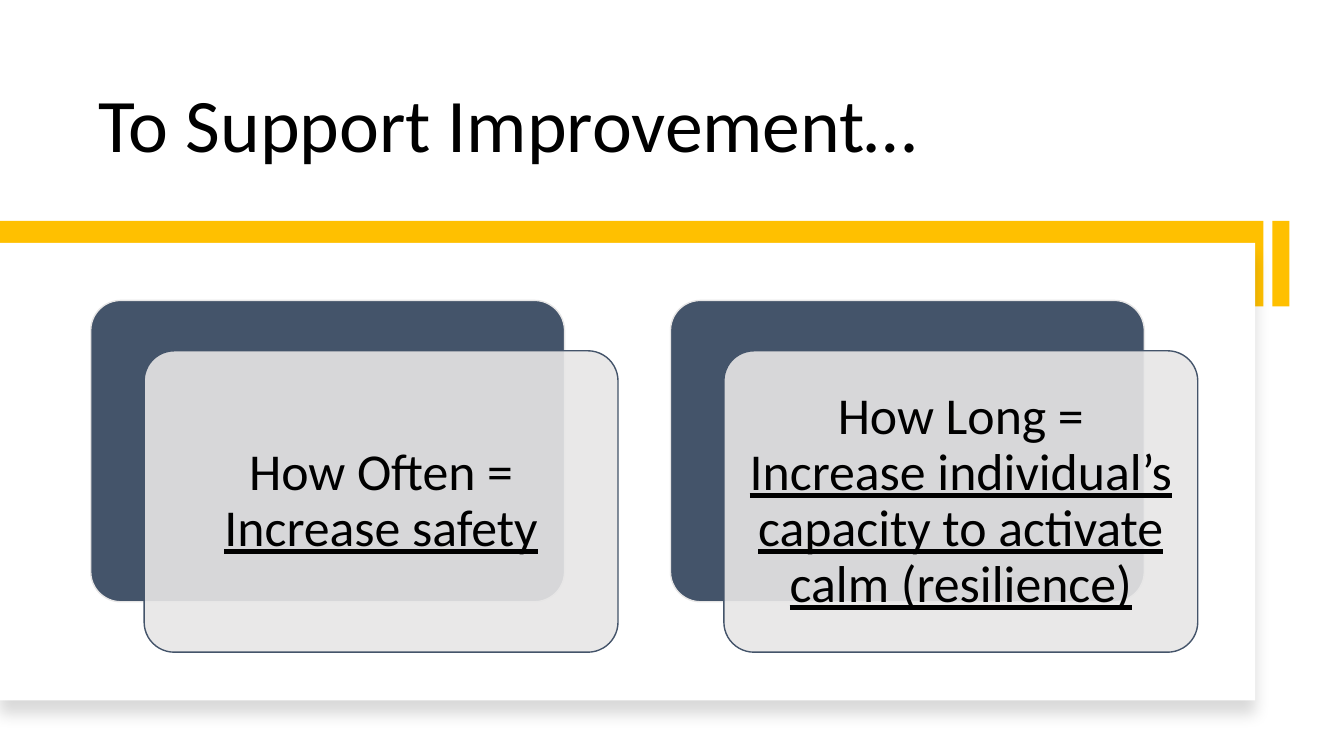
import pptx
import pptx.util
import pptx.dml.color
import pptx.enum.shapes
import pptx.enum.text
import lxml.etree
from dataclasses import dataclass
from pptx.oxml.ns import qn

SLIDE_WIDTH, SLIDE_HEIGHT = 13.33, 7.5
RECTANGLE = pptx.enum.shapes.MSO_SHAPE.RECTANGLE
ROUNDED = pptx.enum.shapes.MSO_SHAPE.ROUNDED_RECTANGLE
ANCHOR = pptx.enum.text.MSO_ANCHOR
ALIGN = pptx.enum.text.PP_ALIGN

# Card grid, in inches
FIRST_LEFT, CARD_TOP = 0.9, 2.98
CARD_WIDTH, CARD_HEIGHT = 4.7, 2.99
COLUMN_STEP = 5.75
FRONT_SHIFT_X, FRONT_SHIFT_Y = 0.53, 0.5

STRATEGIES = [
    ("How Often = ", "Increase safety"),
    ("How Long = ", "Increase individual’s capacity to activate calm (resilience)"),
]


@dataclass(frozen=True)
class Theme:
    font: str = "Calibri"
    title_size: int = 54
    card_size: int = 37
    ink: str = "000000"
    paper: str = "FFFFFF"
    accent: str = "FFC000"
    slate: str = "44546A"
    mist: str = "E7E6E6"


THEME = Theme()


def rgb(colour):
    return pptx.dml.color.RGBColor.from_string(colour)


def box(left, top, width, height):
    return [pptx.util.Inches(length) for length in (left, top, width, height)]


def add_panel(slide, kind, area, fill, outline=None):
    panel = slide.shapes.add_shape(kind, *box(*area))
    panel.shadow.inherit = False
    panel.fill.solid()
    panel.fill.fore_color.rgb = rgb(fill)
    if outline:
        panel.line.color.rgb = rgb(outline)
        panel.line.width = pptx.util.Pt(1)
    else:
        panel.line.fill.background()
    return panel


def add_alpha(colour_element, percent):
    alpha = lxml.etree.SubElement(colour_element, qn("a:alpha"))
    alpha.set("val", str(percent * 1000))


def cast_shadow(panel, blur, distance, opacity):
    effects = panel._element.spPr.find(qn("a:effectLst"))
    shadow = lxml.etree.SubElement(effects, qn("a:outerShdw"))
    shadow.set("blurRad", str(pptx.util.Pt(blur)))
    shadow.set("dist", str(pptx.util.Pt(distance)))
    shadow.set("dir", "5400000")
    shadow.set("algn", "t")
    shadow.set("rotWithShape", "0")
    colour = lxml.etree.SubElement(shadow, qn("a:srgbClr"))
    colour.set("val", THEME.ink)
    add_alpha(colour, opacity)


def write(frame, parts, size, anchor, align):
    """Fill a frame with one paragraph of (wording, underlined) parts."""
    frame.word_wrap = True
    frame.vertical_anchor = anchor
    paragraph = frame.paragraphs[0]
    paragraph.alignment = align
    paragraph.line_spacing = 0.9
    for wording, underlined in parts:
        run = paragraph.add_run()
        run.text = wording
        run.font.name = THEME.font
        run.font.size = pptx.util.Pt(size)
        run.font.color.rgb = rgb(THEME.ink)
        if underlined:
            run.font.underline = True


def add_title(slide, wording):
    title = slide.shapes.add_textbox(*box(0.88, 0.42, 10.1, 1.3))
    write(title.text_frame, [(wording, False)], THEME.title_size,
          ANCHOR.BOTTOM, ALIGN.LEFT)


def add_backdrop(slide):
    # Yellow band and its detached end piece
    band_top, band_height = 2.19, 0.85
    for left, width in ((12.62, 0.17), (0, 12.53)):
        add_panel(slide, RECTANGLE, (left, band_top, width, band_height), THEME.accent)
    # White sheet over the band
    sheet = add_panel(slide, RECTANGLE, (0, 2.41, 12.45, 4.54), THEME.paper)
    cast_shadow(sheet, blur=11, distance=10, opacity=15)


def add_strategy(slide, column, measure, action):
    left = FIRST_LEFT + column * COLUMN_STEP
    back = add_panel(slide, ROUNDED, (left, CARD_TOP, CARD_WIDTH, CARD_HEIGHT),
                     THEME.slate, THEME.mist)
    front = add_panel(slide, ROUNDED,
                      (left + FRONT_SHIFT_X, CARD_TOP + FRONT_SHIFT_Y,
                       CARD_WIDTH, CARD_HEIGHT),
                      THEME.mist, THEME.slate)
    for card in (back, front):
        card.adjustments[0] = 0.1
    add_alpha(front._element.spPr.find(qn("a:solidFill"))[0], 90)

    frame = front.text_frame
    frame.margin_left = frame.margin_right = pptx.util.Inches(0.15)
    frame.margin_top = frame.margin_bottom = pptx.util.Inches(0.15)
    write(frame, [(measure, False), (action, True)], THEME.card_size,
          ANCHOR.MIDDLE, ALIGN.CENTER)


def main():
    deck = pptx.Presentation()
    deck.slide_width = pptx.util.Inches(SLIDE_WIDTH)
    deck.slide_height = pptx.util.Inches(SLIDE_HEIGHT)
    slide = deck.slides.add_slide(deck.slide_layouts[6])

    add_title(slide, "To Support Improvement…")
    add_backdrop(slide)
    for column, (measure, action) in enumerate(STRATEGIES):
        add_strategy(slide, column, measure, action)

    deck.save("out.pptx")


if __name__ == "__main__":
    main()
